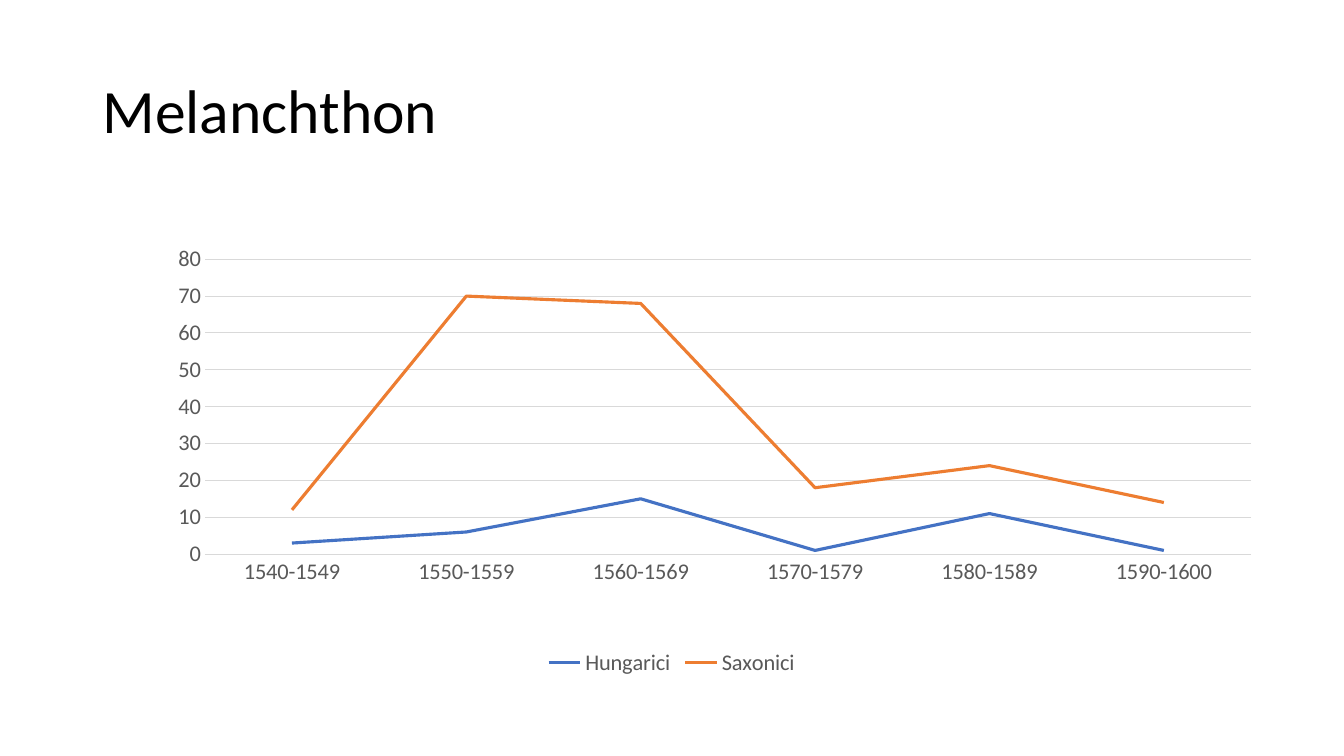
"""Build a slide with a stacked line chart of Melanchthon's students by decade."""
from dataclasses import dataclass

from lxml.etree import SubElement
from pptx import Presentation
from pptx.chart.chart import Chart
from pptx.chart.data import CategoryChartData
from pptx.dml.color import RGBColor
from pptx.enum.chart import XL_CHART_TYPE as ChartType
from pptx.enum.chart import XL_LEGEND_POSITION as LegendPos
from pptx.enum.chart import XL_TICK_MARK as Tick
from pptx.enum.text import MSO_ANCHOR as Anchor
from pptx.enum.text import MSO_AUTO_SIZE as AutoSize
from pptx.enum.text import PP_ALIGN as Align
from pptx.oxml.ns import qn
from pptx.slide import Slide
from pptx.text.text import Font
from pptx.util import Pt

FONT = "Calibri"
BLACK = RGBColor(0x00, 0x00, 0x00)
GRAY = RGBColor(0x59, 0x59, 0x59)
LIGHT = RGBColor(0xD9, 0xD9, 0xD9)
BLUE = RGBColor(0x44, 0x72, 0xC4)
ORANGE = RGBColor(0xED, 0x7D, 0x31)

LEFT, WIDTH = Pt(66), Pt(828)
DECADES = ("1540-1549", "1550-1559", "1560-1569",
           "1570-1579", "1580-1589", "1590-1600")


@dataclass(frozen=True)
class Group:
    name: str
    values: tuple[int, ...]
    color: RGBColor


GROUPS = (
    Group("Hungarici", (3, 6, 15, 1, 11, 1), BLUE),
    Group("Saxonici", (9, 64, 53, 17, 13, 13), ORANGE),
)


def style_font(font: Font, size: float, color: RGBColor) -> None:
    font.name = FONT
    font.size = Pt(size)
    font.color.rgb = color


def add_title(slide: Slide, text: str) -> None:
    sp = slide.shapes.title
    sp.left, sp.top, sp.width, sp.height = LEFT, Pt(28.75), WIDTH, Pt(104.4)
    tf = sp.text_frame
    tf.word_wrap = True
    tf.auto_size = AutoSize.NONE
    tf.vertical_anchor = Anchor.MIDDLE
    p = tf.paragraphs[0]
    p.alignment = Align.LEFT
    p.line_spacing = 0.9
    r = p.add_run()
    r.text = text
    style_font(r.font, 44, BLACK)


def place_plot(chart: Chart, x: float, y: float, w: float, h: float) -> None:
    area = chart._chartSpace.chart.plotArea
    for old in area.findall(qn("c:layout")):
        area.remove(old)
    layout = SubElement(area, qn("c:layout"))
    area.insert(0, layout)
    manual = SubElement(layout, qn("c:manualLayout"))
    settings = (("layoutTarget", "inner"), ("xMode", "edge"), ("yMode", "edge"),
                ("x", x), ("y", y), ("w", w), ("h", h))
    for tag, value in settings:
        SubElement(manual, qn(f"c:{tag}")).set("val", str(value))


def add_line_chart(slide: Slide, groups: tuple[Group, ...]) -> None:
    data = CategoryChartData()
    data.categories = DECADES
    for group in groups:
        data.add_series(group.name, group.values)
    chart = slide.shapes.add_chart(
        ChartType.LINE_STACKED, LEFT, Pt(143.75), WIDTH, Pt(342.6), data).chart
    chart.has_title = False
    style_font(chart.font, 16, GRAY)
    place_plot(chart, 0.097, 0.121, 0.903, 0.615)

    for axis in (chart.category_axis, chart.value_axis):
        axis.major_tick_mark = axis.minor_tick_mark = Tick.NONE
        style_font(axis.tick_labels.font, 16, GRAY)
    val_axis = chart.value_axis
    val_axis.minimum_scale, val_axis.maximum_scale = 0, 80
    val_axis.major_unit = 10
    val_axis.format.line.fill.background()
    for line in (chart.category_axis.format.line,
                 val_axis.major_gridlines.format.line):
        line.color.rgb = LIGHT
        line.width = Pt(0.75)

    chart.has_legend = True
    chart.legend.position = LegendPos.BOTTOM
    chart.legend.include_in_layout = False
    style_font(chart.legend.font, 16, GRAY)

    plot = chart.plots[0]
    plot.vary_by_categories = False
    for group, series in zip(groups, plot.series):
        series.smooth = False
        series.format.line.color.rgb = group.color
        series.format.line.width = Pt(2.25)


def main() -> None:
    prs = Presentation()
    prs.slide_width, prs.slide_height = Pt(960), Pt(540)
    slide = prs.slides.add_slide(prs.slide_layouts[5])
    add_title(slide, "Melanchthon")
    add_line_chart(slide, GROUPS)
    prs.save("out.pptx")


if __name__ == "__main__":
    main()
